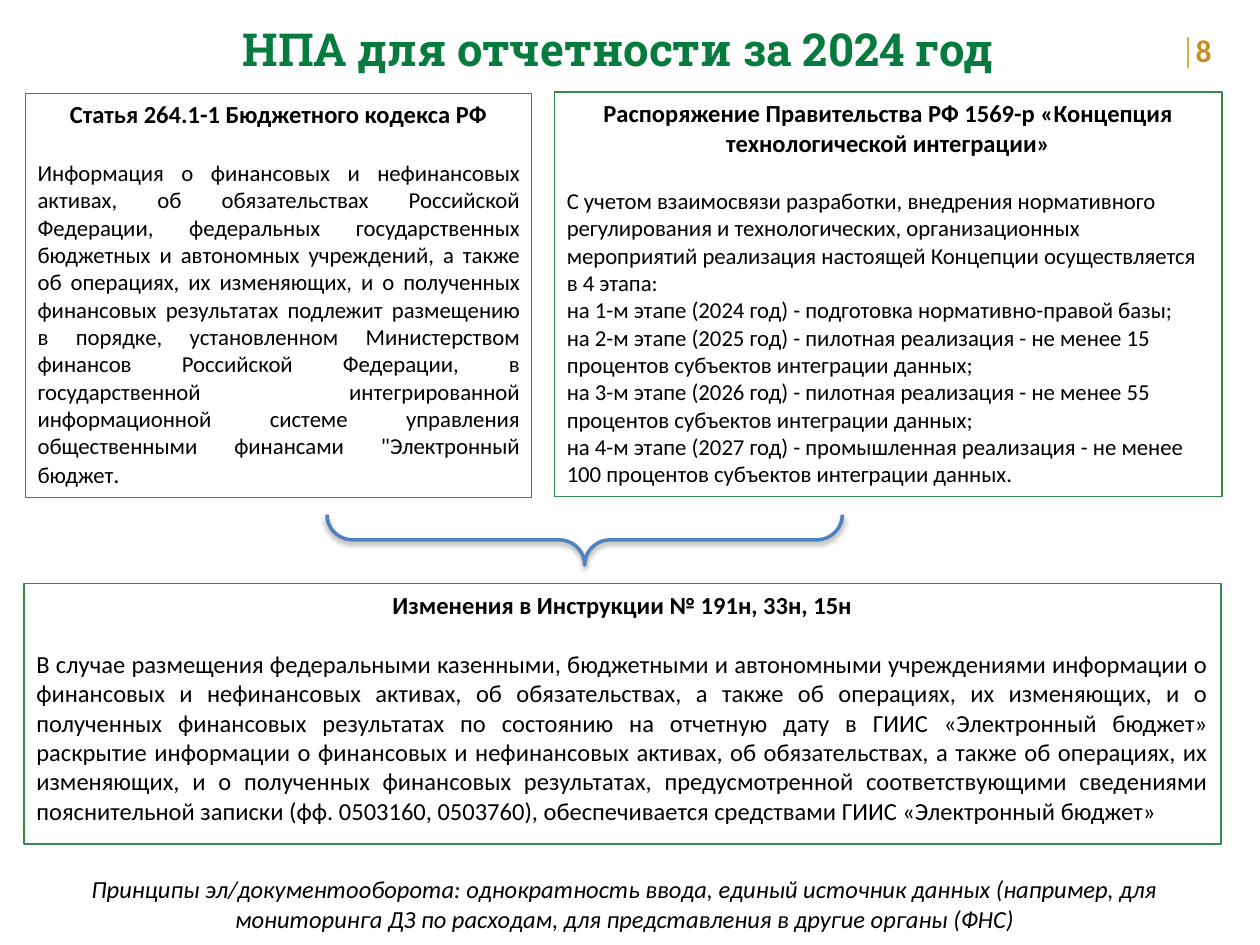
from dataclasses import dataclass

from lxml import etree
from pptx import Presentation
from pptx.dml.color import RGBColor
from pptx.enum.shapes import MSO_CONNECTOR, MSO_SHAPE
from pptx.enum.text import MSO_ANCHOR, MSO_AUTO_SIZE, PP_ALIGN
from pptx.oxml import parse_xml
from pptx.oxml.ns import nsdecls, qn
from pptx.util import Inches, Pt

LEFT, MID, JUST = PP_ALIGN.LEFT, PP_ALIGN.CENTER, PP_ALIGN.JUSTIFY
TOP, CENTER = MSO_ANCHOR.TOP, MSO_ANCHOR.MIDDLE
GROW = MSO_AUTO_SIZE.SHAPE_TO_FIT_TEXT
RECT, BRACE = MSO_SHAPE.RECTANGLE, MSO_SHAPE.RIGHT_BRACE
STRAIGHT = MSO_CONNECTOR.STRAIGHT

GREEN, GOLD, BLACK = "077A3E", "C79023", "000000"
BORDER, RULE, BLUE = "318B4D", "DEAA46", "4F81BD"

BASE = {"name": "Calibri", "size": Pt(14), "bold": False, "italic": False}
HEAD = BASE | {"bold": True}
SMALL = BASE | {"size": Pt(13)}
NOTE = BASE | {"italic": True}
TITLE = HEAD | {"name": "Roboto Slab", "size": Pt(26)}
PAGE = HEAD | {"size": Pt(18)}

Area = tuple[float, float, float, float]


@dataclass
class Para:
    runs: list[tuple[str, dict]]
    align: PP_ALIGN = LEFT
    after: float = 0
    color: str = BLACK


@dataclass
class Panel:
    area: Area
    head: str
    body: list[Para]


PANELS = [
    Panel((0.2, 0.74, 4.02, 3.21), "Статья 264.1-1 Бюджетного кодекса РФ", [
        Para([("Информация о финансовых и нефинансовых активах, об обязательствах "
               "Российской Федерации, федеральных государственных бюджетных и автономных "
               "учреждений, а также об операциях, их изменяющих, и о полученных финансовых "
               "результатах подлежит размещению в порядке, установленном Министерством "
               "финансов Российской Федерации, в государственной интегрированной "
               "информационной системе управления общественными финансами "
               "\"Электронный бюджет", SMALL), (".", BASE)], JUST)]),
    Panel((4.4, 0.73, 5.3, 3.21),
          "Распоряжение Правительства РФ 1569-р «Концепция технологической интеграции»", [
        Para([(text, SMALL)]) for text in (
            "С учетом взаимосвязи разработки, внедрения нормативного регулирования и "
            "технологических, организационных мероприятий реализация настоящей Концепции "
            "осуществляется в 4 этапа:",
            "на 1-м этапе (2024 год) - подготовка нормативно-правой базы;",
            "на 2-м этапе (2025 год) - пилотная реализация - не менее 15 процентов "
            "субъектов интеграции данных;",
            "на 3-м этапе (2026 год) - пилотная реализация - не менее 55 процентов "
            "субъектов интеграции данных;",
            "на 4-м этапе (2027 год) - промышленная реализация - не менее 100 процентов "
            "субъектов интеграции данных.")]),
    Panel((0.19, 4.63, 9.5, 2.07), "Изменения в Инструкции № 191н, 33н, 15н", [
        Para([("В случае размещения федеральными казенными, бюджетными и автономными "
               "учреждениями информации о финансовых и нефинансовых активах, об "
               "обязательствах, а также об операциях, их изменяющих, и о полученных "
               "финансовых результатах по состоянию на отчетную дату в ГИИС «Электронный "
               "бюджет» раскрытие информации о финансовых и нефинансовых активах, "
               "об обязательствах, а также об операциях, их изменяющих, и о полученных "
               "финансовых результатах, предусмотренной соответствующими сведениями "
               "пояснительной записки (фф. 0503160, 0503760), обеспечивается средствами "
               "ГИИС «Электронный бюджет»", BASE)], JUST)]),
]


def paint(target, color: str) -> None:
    target.rgb = RGBColor.from_string(color)


def place(area: Area) -> list:
    return [Inches(n) for n in area]


def write(frame, paras: list[Para], anchor=TOP) -> None:
    frame.word_wrap = True
    frame.vertical_anchor = anchor
    for i, item in enumerate(paras):
        para = frame.add_paragraph() if i else frame.paragraphs[0]
        para.alignment = item.align
        para.space_after = Pt(item.after)
        for text, style in item.runs:
            run = para.add_run()
            run.text = text
            for key, value in style.items():
                setattr(run.font, key, value)
            paint(run.font.color, item.color)


def label(slide, area: Area, para: Para, anchor=TOP):
    frame = slide.shapes.add_textbox(*place(area)).text_frame
    write(frame, [para], anchor)
    return frame


def outline(slide, kind, area: Area, color: str, width: float):
    shape = slide.shapes.add_shape(kind, *place(area))
    shape.shadow.inherit = False
    shape.fill.background()
    paint(shape.line.color, color)
    shape.line.width = Pt(width)
    return shape


def panel(slide, item: Panel) -> None:
    shape = outline(slide, RECT, item.area, BORDER, 0.75)
    head = Para([(item.head, HEAD)], MID, after=17)
    write(shape.text_frame, [head, *item.body])


def brace(slide) -> None:
    shape = outline(slide, BRACE, (4.44, 2.24, 0.4, 4.09), BLUE, 2)
    shape.rotation = 90
    shape.adjustments[0], shape.adjustments[1] = 0.51, 0.5
    effects = shape.element.spPr.find(qn("a:effectLst"))
    effects.append(parse_xml(
        f'<a:outerShdw {nsdecls("a")} blurRad="{Pt(3.1)}" dist="{Pt(1.6)}" '
        'dir="5400000" rotWithShape="0"><a:srgbClr val="000000">'
        '<a:alpha val="38000"/></a:srgbClr></a:outerShdw>'))


def rule(slide) -> None:
    line = slide.shapes.add_connector(STRAIGHT, *place((9.43, 0.29, 9.43, 0.54)))
    paint(line.line.color, RULE)
    line.line.width = Pt(1)
    etree.SubElement(line.element.spPr, qn("a:effectLst"))


def main() -> None:
    deck = Presentation()
    deck.slide_width, deck.slide_height = Inches(10), Inches(7.5)
    slide = deck.slides.add_slide(deck.slide_layouts[6])

    title = label(slide, (0.35, 0.11, 9.06, 0.54),
                  Para([("НПА для отчетности за 2024 год", TITLE)], MID, color=GREEN), CENTER)
    title.auto_size = GROW
    title.margin_left = Inches(0.16)
    label(slide, (9.39, 0.2, 0.61, 0.4), Para([("8", PAGE)], color=GOLD))
    rule(slide)
    for item in PANELS:
        panel(slide, item)
    brace(slide)
    label(slide, (0.21, 6.89, 9.5, 0.49), Para([(
        "Принципы эл/документооборота: однократность ввода, единый источник данных "
        "(например, для мониторинга ДЗ по расходам, для представления в другие органы (ФНС)",
        NOTE)], MID))
    deck.save("out.pptx")


if __name__ == "__main__":
    main()
